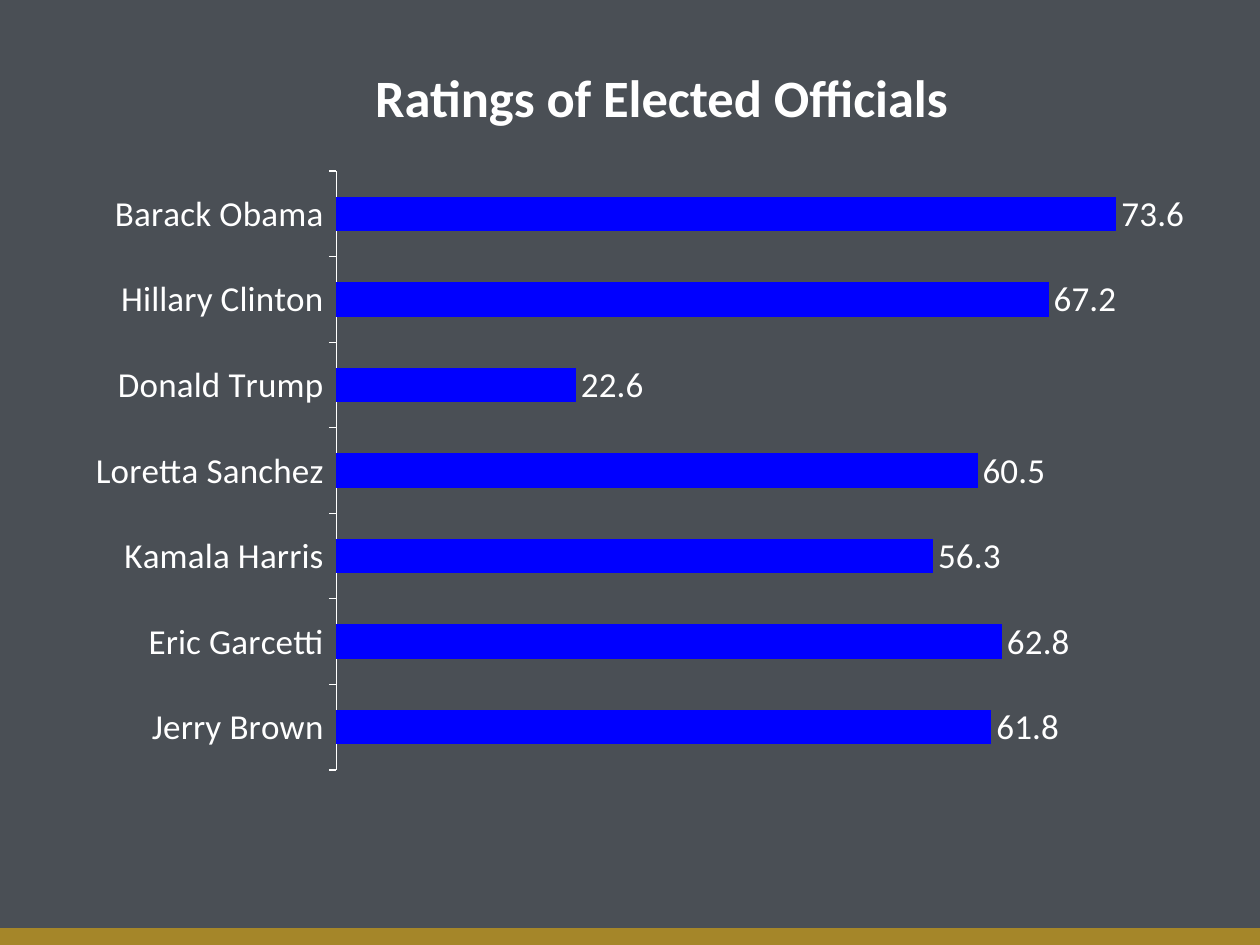
from typing import NamedTuple

from pptx import Presentation
from pptx.chart.data import CategoryChartData
from pptx.dml.color import RGBColor
from pptx.enum import chart as chart_enum, shapes, text
from pptx.util import Inches, Pt

SLATE = RGBColor(0x4A, 0x4F, 0x55)
GOLD = RGBColor(0xA5, 0x86, 0x29)
WHITE = RGBColor(0xFF, 0xFF, 0xFF)
BLUE = RGBColor(0x00, 0x00, 0xFF)
FONT = "Calibri"


class Box(NamedTuple):
    left: float
    top: float
    width: float
    height: float

    def lengths(self) -> list:
        return [Inches(value) for value in self]


class Rating(NamedTuple):
    official: str
    score: float


# Bar charts stack categories upward, so the last rating is at the top.
RATINGS = [
    Rating("Jerry Brown", 61.8),
    Rating("Eric Garcetti", 62.8),
    Rating("Kamala Harris", 56.3),
    Rating("Loretta Sanchez", 60.5),
    Rating("Donald Trump", 22.6),
    Rating("Hillary Clinton", 67.2),
    Rating("Barack Obama", 73.6),
]


def format_font(font, *, size: float, bold: bool = False, color: RGBColor = WHITE) -> None:
    font.name = FONT
    font.size = Pt(size)
    font.bold = bold
    font.color.rgb = color


def add_text(slide, box: Box, content: str, *, size: float, bold: bool = False) -> None:
    frame = slide.shapes.add_textbox(*box.lengths()).text_frame
    frame.word_wrap = True
    frame.vertical_anchor = text.MSO_ANCHOR.MIDDLE
    paragraph = frame.paragraphs[0]
    paragraph.alignment = text.PP_ALIGN.CENTER
    run = paragraph.add_run()
    run.text = content
    format_font(run.font, size=size, bold=bold)


def add_footer_band(slide, box: Box) -> None:
    band = slide.shapes.add_shape(shapes.MSO_SHAPE.RECTANGLE, *box.lengths())
    band.shadow.inherit = False
    band.fill.solid()
    band.fill.fore_color.rgb = GOLD
    band.line.color.rgb = GOLD
    band.line.width = Pt(0.75)


def add_ratings_chart(slide, box: Box, ratings: list[Rating]) -> None:
    data = CategoryChartData()
    data.categories = [rating.official for rating in ratings]
    data.add_series("Series 1", [rating.score for rating in ratings])
    chart = slide.shapes.add_chart(
        chart_enum.XL_CHART_TYPE.BAR_CLUSTERED, *box.lengths(), data
    ).chart
    chart.has_legend = False
    chart.has_title = False
    format_font(chart.font, size=10)

    names = chart.category_axis
    names.major_tick_mark = chart_enum.XL_TICK_MARK.OUTSIDE
    names.has_major_gridlines = False
    names.format.line.color.rgb = WHITE
    format_font(names.tick_labels.font, size=20)

    scores = chart.value_axis
    scores.minimum_scale = 0
    scores.maximum_scale = 80
    scores.has_major_gridlines = False
    scores.visible = False

    plot = chart.plots[0]
    plot.gap_width = 150
    plot.vary_by_categories = False
    fill = plot.series[0].format.fill
    fill.solid()
    fill.fore_color.rgb = BLUE

    plot.has_data_labels = True
    labels = plot.data_labels
    labels.show_value = True
    labels.number_format = "0.0"
    labels.number_format_is_linked = False
    labels.position = chart_enum.XL_LABEL_POSITION.OUTSIDE_END
    format_font(labels.font, size=20)


def main() -> None:
    presentation = Presentation()
    presentation.slide_width = Inches(10)
    presentation.slide_height = Inches(7.5)
    slide = presentation.slides.add_slide(presentation.slide_layouts[6])
    slide.background.fill.solid()
    slide.background.fill.fore_color.rgb = SLATE

    add_footer_band(slide, Box(0, 7.37, 10, 0.13))
    add_text(slide, Box(0.8, 0.14, 9, 1.25), "Ratings of Elected Officials ", size=30, bold=True)
    add_ratings_chart(slide, Box(0.58, 1.26, 9, 4.95), RATINGS)
    presentation.save("out.pptx")


if __name__ == "__main__":
    main()
